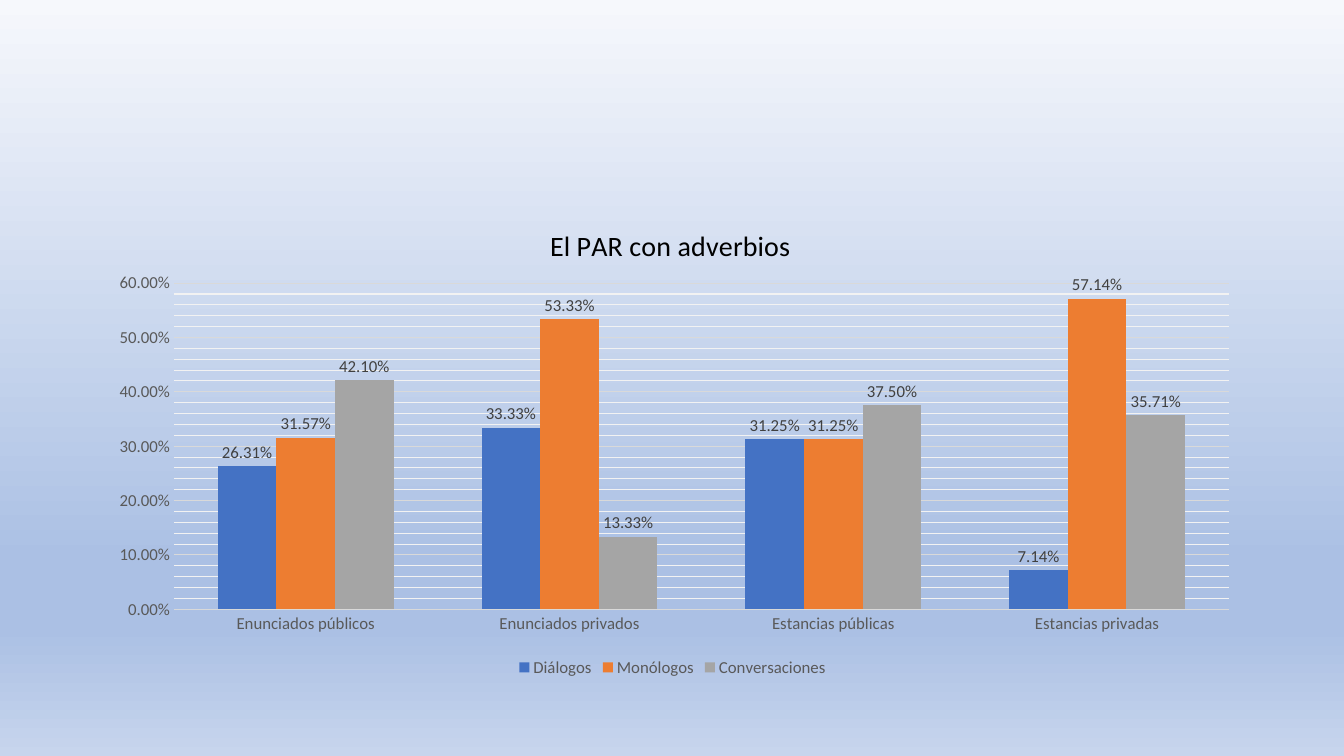
from pptx import Presentation
from pptx import util as u
from pptx.chart.data import CategoryChartData
from pptx.dml.color import RGBColor
from pptx.enum import chart as ch
from pptx.oxml import parse_xml
from pptx.oxml.ns import nsdecls, qn

# Content
TITLE = "El PAR con adverbios"
GROUPS = ["Enunciados públicos", "Enunciados privados",
          "Estancias públicas", "Estancias privadas"]
SERIES = [
    ("Diálogos", "blue", (0.2631, 0.3333, 0.3125, 0.0714)),
    ("Monólogos", "orange", (0.3157, 0.5333, 0.3125, 0.5714)),
    ("Conversaciones", "gray", (0.421, 0.1333, 0.375, 0.3571)),
]
COLORS = {"blue": "4472C4", "orange": "ED7D31", "gray": "A5A5A5",
          "title": "000000", "axis": "595959", "label": "404040",
          "major": "D9D9D9", "minor": "F2F2F2",
          "top": "F6F8FC", "mid": "ABC0E4", "base": "C7D5ED"}
STOPS = [(0, "top"), (74, "mid"), (83, "mid"), (100, "base")]
PERCENT = "0.00%"


def color(name):
    return RGBColor.from_string(COLORS[name])


def style(font, size=12, tint="axis"):
    font.name, font.size, font.bold = "Calibri", u.Pt(size), False
    font.color.rgb = color(tint)


def write(frame, text, **form):
    frame.text = text
    style(frame.paragraphs[0].runs[0].font, **form)


def rule(line, tint):
    line.color.rgb = color(tint)
    line.width = u.Pt(0.75)


def place(part, **spots):
    """Fix a chart part at fractions of the chart area."""
    old = part.find(qn("c:layout"))
    at = 0
    if old is not None:
        at = part.index(old)
        part.remove(old)
    inner = '<c:layoutTarget val="inner"/>' if "w" in spots else ""
    modes = "".join(f'<c:{k}Mode val="edge"/>' for k in "xy")
    sizes = "".join(f'<c:{k} val="{v}"/>' for k, v in spots.items())
    part.insert(at, parse_xml(
        f'<c:layout {nsdecls("c")}><c:manualLayout>{inner}{modes}{sizes}'
        '</c:manualLayout></c:layout>'))


# Slide and background
deck = Presentation()
deck.slide_width, deck.slide_height = u.Inches(13.33), u.Inches(7.5)
slide = deck.slides.add_slide(deck.slide_layouts[6])
fill = slide.background.fill
fill.gradient()
fill.gradient_angle = 270
stops = "".join(f'<a:gs pos="{pos * 1000}"><a:srgbClr val="{COLORS[tint]}"/></a:gs>'
                for pos, tint in STOPS)
grad = slide.element.find(".//" + qn("a:gradFill"))
grad.replace(grad.find(qn("a:gsLst")),
             parse_xml(f'<a:gsLst {nsdecls("a")}>{stops}</a:gsLst>'))

# Chart
data = CategoryChartData(number_format=PERCENT)
data.categories = GROUPS
for name, _, vals in SERIES:
    data.add_series(name, vals)
chart = slide.shapes.add_chart(
    ch.XL_CHART_TYPE.COLUMN_CLUSTERED, u.Inches(0.92), u.Inches(2),
    u.Inches(11.5), u.Inches(4.76), data).chart
style(chart.font, size=10, tint="title")
write(chart.chart_title.text_frame, TITLE, size=20, tint="title")
root = chart.element if hasattr(chart, "element") else chart._chartSpace
place(root.find(".//" + qn("c:title")), x=0.39, y=0.04)
place(root.find(".//" + qn("c:plotArea")), x=0.07, y=0.17, w=0.91, h=0.68)

# Columns and labels
plot = chart.plots[0]
plot.gap_width, plot.overlap, plot.vary_by_categories = 150, 0, False
for bars, (_, tint, _) in zip(plot.series, SERIES):
    bars.format.fill.solid()
    bars.format.fill.fore_color.rgb = color(tint)
    labels = bars.data_labels
    labels.show_value = True
    labels.number_format, labels.number_format_is_linked = PERCENT, False
    labels.position = ch.XL_LABEL_POSITION.OUTSIDE_END
    style(labels.font, tint="label")

# Axes
for axis in (chart.category_axis, chart.value_axis):
    axis.major_tick_mark = axis.minor_tick_mark = ch.XL_TICK_MARK.NONE
    style(axis.tick_labels.font)
rule(chart.category_axis.format.line, "major")
scale = chart.value_axis
scale.minimum_scale, scale.maximum_scale = 0, 0.6
scale.major_unit, scale.minor_unit = 0.1, 0.02
scale.has_major_gridlines = scale.has_minor_gridlines = True
rule(scale.major_gridlines.format.line, "major")
root.find(".//" + qn("c:minorGridlines")).append(parse_xml(
    f'<c:spPr {nsdecls("c", "a")}><a:ln w="{u.Pt(0.75)}"><a:solidFill>'
    f'<a:srgbClr val="{COLORS["minor"]}"/></a:solidFill></a:ln></c:spPr>'))
scale.format.line.fill.background()
scale.tick_labels.number_format = PERCENT
scale.tick_labels.number_format_is_linked = False

# Legend
chart.has_legend = True
chart.legend.position = ch.XL_LEGEND_POSITION.BOTTOM
chart.legend.include_in_layout = False
style(chart.legend.font)

deck.save("out.pptx")
